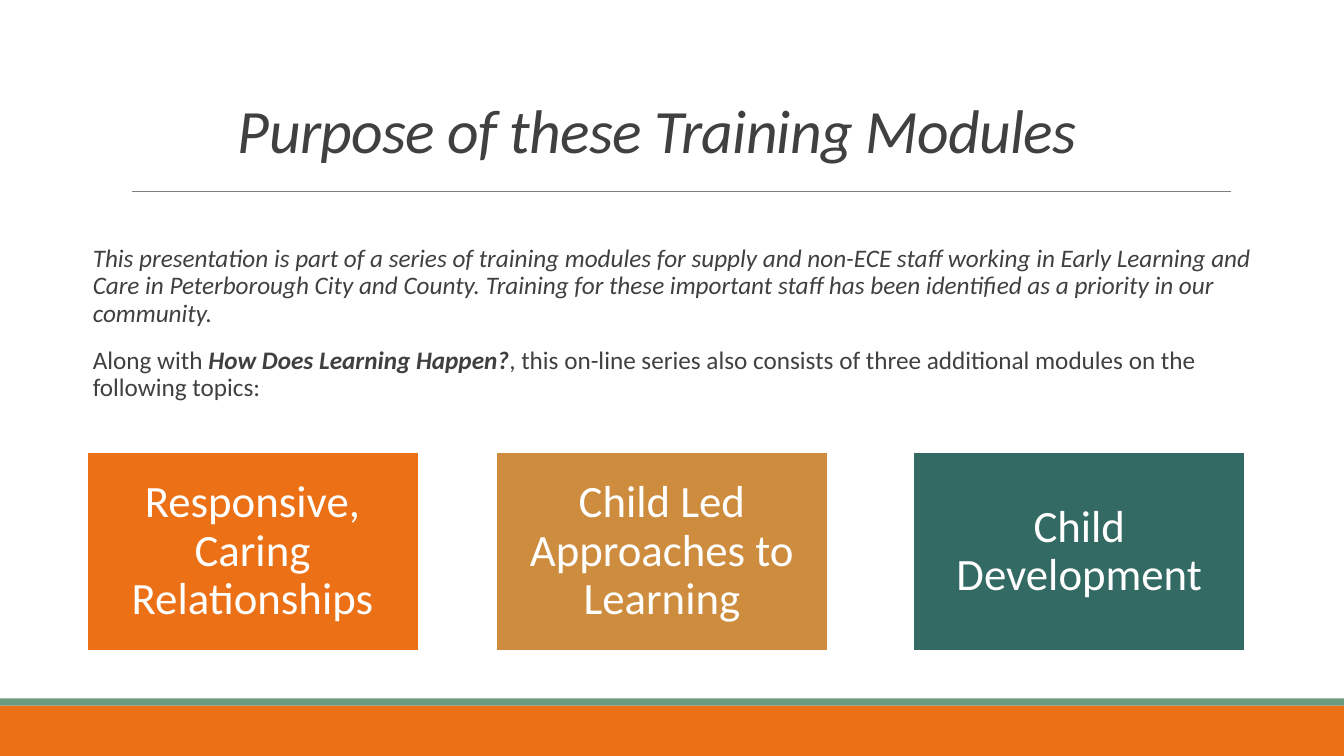
from lxml.etree import SubElement
from pptx import Presentation
from pptx.dml.color import RGBColor
from pptx.enum.shapes import MSO_CONNECTOR, MSO_SHAPE
from pptx.enum.text import MSO_ANCHOR, MSO_AUTO_SIZE, PP_ALIGN
from pptx.oxml.ns import qn
from pptx.util import Inches, Pt

ORANGE = RGBColor(0xEC, 0x70, 0x16)
GREEN = RGBColor(0x6D, 0x9B, 0x7F)
OCHRE = RGBColor(0xCE, 0x8D, 0x3E)
TEAL = RGBColor(0x34, 0x6A, 0x64)
GREY = RGBColor(0x80, 0x80, 0x80)
DARK = RGBColor(0x40, 0x40, 0x40)
WHITE = RGBColor(0xFF, 0xFF, 0xFF)

SLIDE_WIDTH = 13.33
TOPICS = [
    ("Responsive, Caring Relationships", 0.86, ORANGE),
    ("Child Led Approaches to Learning", 4.92, OCHRE),
    ("Child Development", 9.06, TEAL),
]
# Each paragraph is a list of (text, bold, italic)
INTRO = [
    [("This presentation is part of a series of training modules for supply and "
      "non-ECE staff working in Early Learning and Care in Peterborough City and "
      "County. Training for these important staff has been identified as a "
      "priority in our community.", False, True)],
    [("Along with ", False, False),
     ("How Does Learning Happen?", True, True),
     (", this on-line series also consists of three additional modules on the "
      "following topics:", False, False)],
]


def place(shape, left, top, width, height):
    shape.left, shape.top = Inches(left), Inches(top)
    shape.width, shape.height = Inches(width), Inches(height)


def style_paragraph(paragraph, size, color, spacing, align=PP_ALIGN.LEFT):
    paragraph.alignment = align
    paragraph.line_spacing = spacing
    paragraph.space_before = Pt(0)
    paragraph.font.name = "Calibri"
    paragraph.font.size = Pt(size)
    paragraph.font.color.rgb = color


def add_block(slide, left, top, width, height, fill):
    block = slide.shapes.add_shape(MSO_SHAPE.RECTANGLE, Inches(left), Inches(top),
                                   Inches(width), Inches(height))
    block.shadow.inherit = False
    block.fill.solid()
    block.fill.fore_color.rgb = fill
    block.line.fill.background()
    return block


def add_rule(slide, left, right, top):
    rule = slide.shapes.add_connector(MSO_CONNECTOR.STRAIGHT, Inches(left),
                                      Inches(top), Inches(right), Inches(top))
    rule.line.color.rgb = GREY
    rule.line.width = Pt(0.5)
    SubElement(rule._element.spPr, qn("a:effectLst"))


def fill_title(title, text):
    place(title, 2.26, 0.63, 9.75, 1.07)
    frame = title.text_frame
    frame.text = text
    frame.auto_size = MSO_AUTO_SIZE.NONE
    frame.vertical_anchor = MSO_ANCHOR.BOTTOM
    heading = frame.paragraphs[0]
    style_paragraph(heading, 44, DARK, 0.85)
    heading.font.italic = True
    # Tighten the letter spacing by half a point
    heading.runs[0]._r.get_or_add_rPr().set("spc", "-50")


def fill_intro(body):
    place(body, 0.92, 2.39, 11.66, 1.75)
    frame = body.text_frame
    frame.auto_size = MSO_AUTO_SIZE.NONE
    frame.margin_left = frame.margin_right = 0
    for index, pieces in enumerate(INTRO):
        paragraph = frame.add_paragraph() if index else frame.paragraphs[0]
        # Plain text: no bullet and no hanging indent
        properties = paragraph._p.get_or_add_pPr()
        properties.set("marL", "0")
        properties.set("indent", "0")
        SubElement(properties, qn("a:buNone"))
        style_paragraph(paragraph, 18, DARK, 0.9)
        paragraph.space_before = Pt(12 if index else 0)
        paragraph.space_after = Pt(2)
        for text, bold, italic in pieces:
            run = paragraph.add_run()
            run.text = text
            run.font.bold = bold
            run.font.italic = italic


def add_topic(slide, text, left, fill):
    topic = add_block(slide, left, 4.49, 3.29, 1.97, fill)
    topic.line.color.rgb = WHITE
    topic.line.width = Pt(1.25)
    frame = topic.text_frame
    frame.text = text
    frame.word_wrap = True
    frame.vertical_anchor = MSO_ANCHOR.MIDDLE
    frame.margin_left = frame.margin_right = Inches(0.13)
    frame.margin_top = frame.margin_bottom = Inches(0.13)
    style_paragraph(frame.paragraphs[0], 32, WHITE, 0.9, PP_ALIGN.CENTER)


def main():
    presentation = Presentation()
    presentation.slide_width = Inches(SLIDE_WIDTH)
    presentation.slide_height = Inches(7.5)
    slide = presentation.slides.add_slide(presentation.slide_layouts[1])

    # Footer bands and title rule
    add_block(slide, 0, 7, SLIDE_WIDTH, 0.5, ORANGE)
    add_block(slide, 0, 6.93, SLIDE_WIDTH, 0.07, GREEN)
    add_rule(slide, 1.31, 12.21, 1.9)

    # Title and introduction
    fill_title(slide.shapes.title, "Purpose of these Training Modules")
    fill_intro(slide.placeholders[1])

    # Module topics
    for text, left, fill in TOPICS:
        add_topic(slide, text, left, fill)

    presentation.save("out.pptx")


if __name__ == "__main__":
    main()
